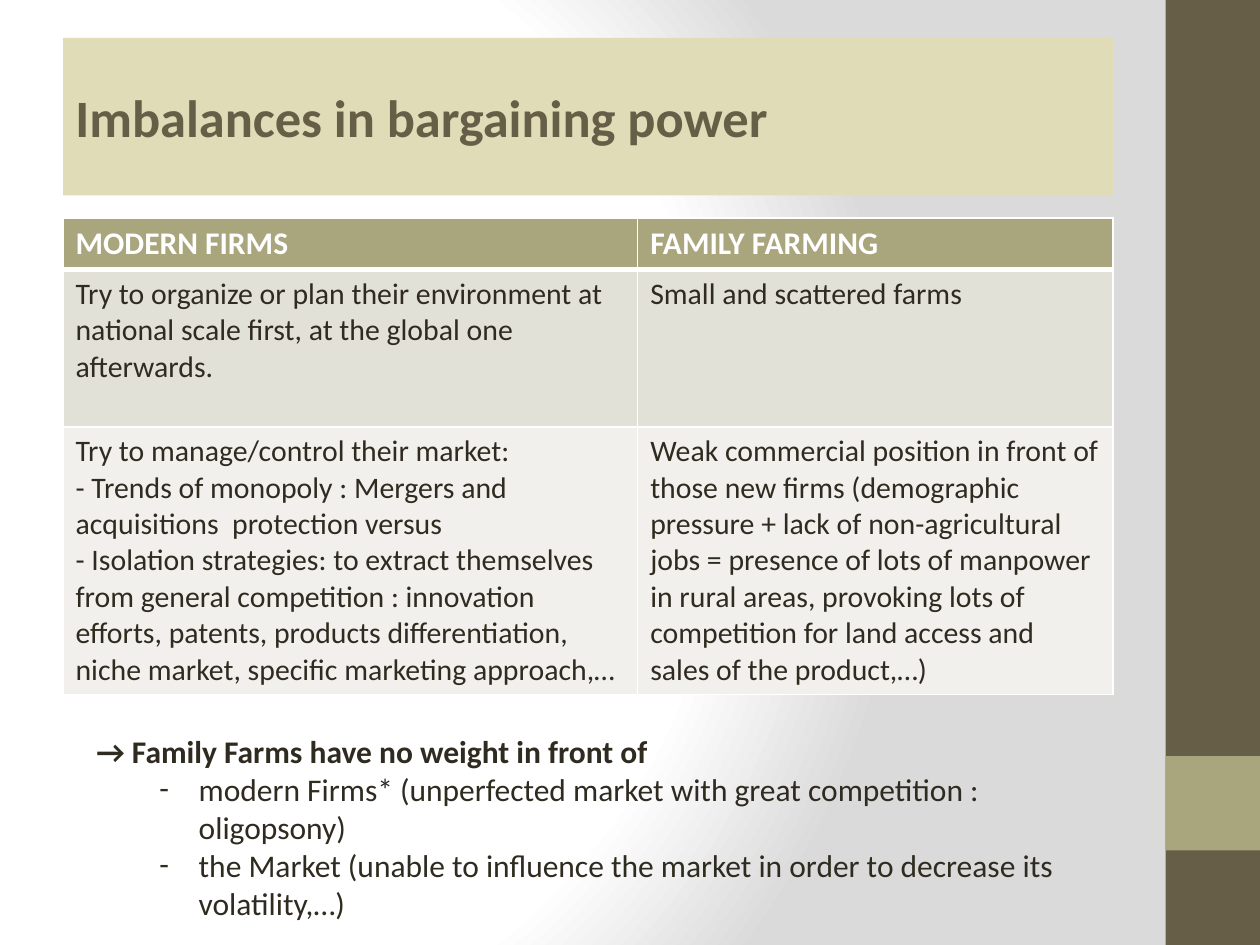
from dataclasses import dataclass

from pptx import Presentation
from pptx import util as u
from pptx.dml.color import RGBColor
from pptx.enum import shapes, text
from pptx.oxml import parse_xml
from pptx.oxml.ns import nsdecls, qn


@dataclass(frozen=True)
class Theme:
    font: str = "Calibri"
    ink: str = "2F2B20"
    brown: str = "675E47"
    olive: str = "A9A57C"
    sand: str = "DFDCB7"
    white: str = "FFFFFF"
    grey: str = "DADADA"
    bands: tuple = ("E2E1D7", "F1F0EC")
    title: int = 30
    body: int = 18
    cell: int = 17


class SlideBuilder:
    """Holds the theme and the current page, and adds each kind of element."""

    def __init__(self, theme, page):
        self.theme = theme
        self.page = page

    def apply(self, target, values):
        for name, value in values.items():
            setattr(target, name, value)

    def paint(self, target, color):
        target.fill.solid()
        target.fill.fore_color.rgb = RGBColor.from_string(color)

    def background(self):
        self.page.background.fill.gradient()
        old = self.page.element.find(".//" + qn("a:gradFill"))
        stops = "".join(
            f'<a:gs pos="{pos * 1000}"><a:srgbClr val="{color}"/></a:gs>'
            for pos, color in ((0, self.theme.white), (75, self.theme.white), (100, self.theme.grey))
        )
        old.getparent().replace(old, parse_xml(
            f'<a:gradFill rotWithShape="1" {nsdecls("a")}><a:gsLst>{stops}</a:gsLst>'
            '<a:path path="circle"><a:fillToRect l="20000" t="50000" r="100000" b="50000"/>'
            "</a:path></a:gradFill>"
        ))

    def add_span(self, para, words, size, color, bold=False):
        span = para.add_run()
        span.text = words
        self.apply(span.font, {"name": self.theme.font, "size": u.Pt(size), "bold": bold})
        span.font.color.rgb = RGBColor.from_string(color)

    def rectangle(self, place, color):
        box = self.page.shapes.add_shape(shapes.MSO_SHAPE.RECTANGLE, *map(u.Pt, place))
        box.shadow.inherit = False
        self.paint(box, color)
        box.line.fill.background()
        return box

    def title(self, place, words):
        frame = self.rectangle(place, self.theme.sand).text_frame
        self.apply(frame, {"word_wrap": True, "vertical_anchor": text.MSO_ANCHOR.MIDDLE})
        para = frame.paragraphs[0]
        para.alignment = text.PP_ALIGN.LEFT
        self.add_span(para, words, self.theme.title, self.theme.brown, True)

    def borders(self, cell, bottom):
        widths = {"lnL": 1, "lnR": 1, "lnT": 1, "lnB": bottom}
        for index, (side, width) in enumerate(widths.items()):
            cell._tc.get_or_add_tcPr().insert(index, parse_xml(
                f'<a:{side} w="{u.Pt(width)}" {nsdecls("a")}><a:solidFill>'
                f'<a:srgbClr val="{self.theme.white}"/></a:solidFill></a:{side}>'
            ))

    def table(self, place, widths, heights, rows):
        grid = self.page.shapes.add_table(len(rows), len(widths), *map(u.Pt, place)).table
        for column, width in zip(grid.columns, widths):
            column.width = u.Pt(width)
        for r, (row, height) in enumerate(zip(rows, heights)):
            grid.rows[r].height = u.Pt(height)
            header = r == 0
            fill = self.theme.olive if header else self.theme.bands[r - 1]
            size = self.theme.body if header else self.theme.cell
            color = self.theme.white if header else self.theme.ink
            for c, lines in enumerate(row):
                cell = grid.cell(r, c)
                self.paint(cell, fill)
                self.borders(cell, 3 if header else 1)
                frame = cell.text_frame
                for i, line in enumerate(lines):
                    para = frame.add_paragraph() if i else frame.paragraphs[0]
                    self.add_span(para, line, size, color, header)

    def conclusion(self, place, lead, points):
        frame = self.page.shapes.add_textbox(*map(u.Pt, place)).text_frame
        self.apply(frame, {"word_wrap": True, "margin_top": u.Pt(25.5)})
        self.add_span(frame.paragraphs[0], lead, self.theme.body, self.theme.ink, True)
        for point in points:
            para = frame.add_paragraph()
            para.level = 1
            props = para._p.get_or_add_pPr()
            props.set("marL", str(u.Pt(58.5)))
            props.set("indent", str(u.Pt(-22.5)))
            props.append(parse_xml(f'<a:buFont typeface="{self.theme.font}" {nsdecls("a")}/>'))
            props.append(parse_xml(f'<a:buChar char="-" {nsdecls("a")}/>'))
            self.add_span(para, point, self.theme.body, self.theme.ink)


def main():
    deck = Presentation()
    deck.slide_width, deck.slide_height = u.Pt(720), u.Pt(540)
    theme = Theme()
    builder = SlideBuilder(theme, deck.slides.add_slide(deck.slide_layouts[6]))
    builder.background()
    builder.rectangle((666, 0, 54, 540), theme.brown)
    builder.rectangle((666, 432, 54, 54), theme.olive)
    builder.title((36, 21.6, 600, 90), "Imbalances in bargaining power")
    widths, heights = (328.4, 271.6), (29.5, 90, 152.5)
    builder.table((36, 124.6, sum(widths), sum(heights)), widths, heights, (
        (["MODERN FIRMS"], ["FAMILY FARMING"]),
        (
            ["Try to organize or plan their environment at national scale first, "
             "at the global one afterwards."],
            ["Small and scattered farms"],
        ),
        (
            [
                "Try to manage/control their market:",
                "- Trends of monopoly : Mergers and acquisitions  protection versus",
                "- Isolation strategies: to extract themselves from general competition : "
                "innovation efforts, patents, products differentiation, niche market, "
                "specific marketing approach,…",
            ],
            ["Weak commercial position in front of those new firms (demographic pressure "
             "+ lack of non-agricultural jobs = presence of lots of manpower in rural areas, "
             "provoking lots of competition for land access and sales of the product,…)"],
        ),
    ))
    builder.conclusion((48, 393, 575.5, 138.5), "→ Family Farms have no weight in front of", (
        "modern Firms* (unperfected market with great competition : oligopsony)",
        "the Market (unable to influence the market in order to decrease its volatility,…)",
    ))
    deck.save("out.pptx")


if __name__ == "__main__":
    main()
